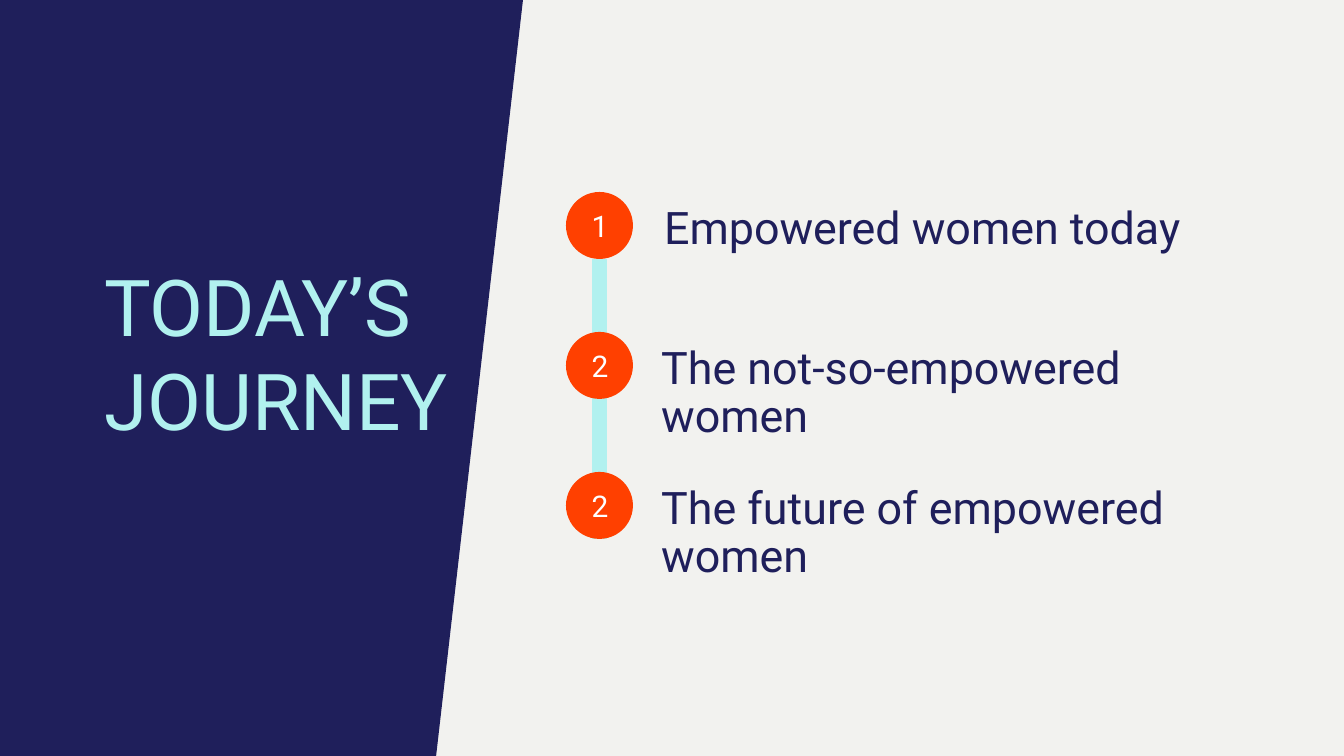
"""Build the agenda slide with a slanted title panel and a three-stop timeline."""
import pptx
import pptx.util
import pptx.dml.color
import pptx.enum.shapes
import pptx.enum.text
import pptx.oxml.ns
import lxml.etree

TITLE = "TODAY’S JOURNEY"
STOPS = [
    {"number": "1", "label": "Empowered women today", "left": 651, "width": 634, "height": 77},
    {"number": "2", "label": "The not-so-empowered women", "left": 648, "width": 606, "height": 77},
    {"number": "2", "label": "The future of empowered women", "left": 648, "width": 551, "height": 125},
]
COLORS = {"paper": "F2F2EF", "navy": "1F1F5B", "aqua": "B1F1EF", "orange": "FF4000", "white": "FFFFFF"}
FONT = "Roboto"
PANEL = [(-191, 766), (-102, -9), (524, -9), (435, 766)]
CIRCLE_LEFT, CIRCLE_SIZE = 566, 67
FIRST_TOP, STEP = 192, 140


def px(length):
    return round(length * 914400 / 134.4)


def color(name):
    return pptx.dml.color.RGBColor.from_string(COLORS[name])


def paint(shape, name):
    shape.shadow.inherit = False
    shape.fill.solid()
    shape.fill.fore_color.rgb = color(name)
    shape.line.fill.background()


def add_text(slide, text, box, size, name, centred=False, spacing=None):
    shape = slide.shapes.add_textbox(*map(px, box))
    frame = shape.text_frame
    frame.word_wrap = True
    frame.auto_size = pptx.enum.text.MSO_AUTO_SIZE.SHAPE_TO_FIT_TEXT
    frame.margin_left = frame.margin_right = pptx.util.Inches(0.1)
    frame.margin_top = frame.margin_bottom = pptx.util.Inches(0.1)
    paragraph = frame.paragraphs[0]
    if centred:
        frame.vertical_anchor = pptx.enum.text.MSO_ANCHOR.MIDDLE
        paragraph.alignment = pptx.enum.text.PP_ALIGN.CENTER
    if spacing:
        paragraph.line_spacing = spacing
    run = paragraph.add_run()
    run.text = text
    run.font.name = FONT
    run.font.size = pptx.util.Pt(size)
    run.font.color.rgb = color(name)


def add_link(slide, x, top, bottom):
    link = slide.shapes.add_connector(
        pptx.enum.shapes.MSO_CONNECTOR.STRAIGHT, px(x), px(top), px(x), px(bottom))
    link.line.color.rgb = color("aqua")
    link.line.width = pptx.util.Pt(8)
    properties = link._element.spPr
    lxml.etree.SubElement(properties, pptx.oxml.ns.qn("a:effectLst"))


def add_panel(slide):
    points = [(px(x), px(y)) for x, y in PANEL]
    builder = slide.shapes.build_freeform(*points[0])
    builder.add_line_segments(points[1:], close=True)
    paint(builder.convert_to_shape(), "navy")


def add_stop(slide, stop, top):
    circle = slide.shapes.add_shape(
        pptx.enum.shapes.MSO_SHAPE.OVAL,
        px(CIRCLE_LEFT), px(top), px(CIRCLE_SIZE), px(CIRCLE_SIZE))
    paint(circle, "orange")
    add_text(slide, stop["number"], (CIRCLE_LEFT + 10, top + 2, 48, 63), 16, "white", centred=True)
    add_text(slide, stop["label"], (stop["left"], top, stop["width"], stop["height"]),
             24, "navy", spacing=0.9)


def main():
    presentation = pptx.Presentation()
    presentation.slide_width, presentation.slide_height = px(1344), px(756)
    slide = presentation.slides.add_slide(presentation.slide_layouts[6])
    slide.background.fill.solid()
    slide.background.fill.fore_color.rgb = color("paper")

    tops = [FIRST_TOP + STEP * index for index in range(len(STOPS))]
    for upper, lower in zip(tops, tops[1:]):
        add_link(slide, CIRCLE_LEFT + CIRCLE_SIZE / 2, upper + CIRCLE_SIZE, lower + CIRCLE_SIZE)
    add_panel(slide)
    add_text(slide, TITLE, (91, 245, 487, 218), 42, "aqua")
    for stop, top in zip(STOPS, tops):
        add_stop(slide, stop, top)
    presentation.save("out.pptx")


if __name__ == "__main__":
    main()
